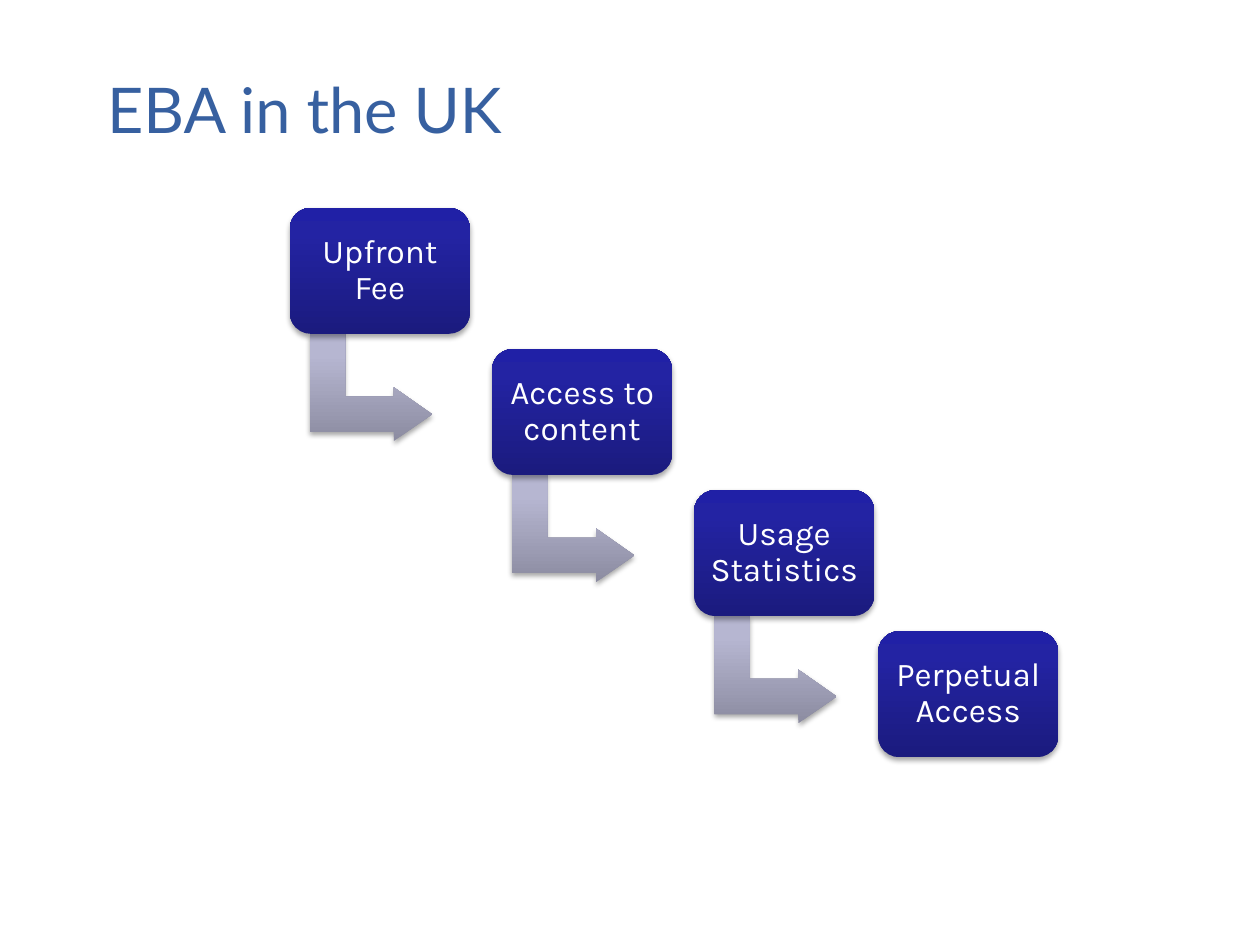
from dataclasses import dataclass

from lxml import etree
from pptx import Presentation
from pptx.dml.color import RGBColor
from pptx.enum.shapes import MSO_SHAPE
from pptx.enum.text import MSO_ANCHOR, PP_ALIGN
from pptx.oxml import parse_xml
from pptx.oxml.ns import nsdecls
from pptx.util import Inches, Pt

ROUNDED, BENT_ARROW = MSO_SHAPE.ROUNDED_RECTANGLE, MSO_SHAPE.BENT_UP_ARROW
TOP, MIDDLE = MSO_ANCHOR.TOP, MSO_ANCHOR.MIDDLE
LEFT, CENTER = PP_ALIGN.LEFT, PP_ALIGN.CENTER


@dataclass(frozen=True)
class Theme:
    title_font: str = "Lato"
    title_size: int = 36
    title_color: str = "3760A0"
    step_font: str = "Karla"
    step_size: int = 19
    step_color: str = "FFFFFF"
    step_fill: tuple = ((0, "1B1B7E"), (80, "2323A3"), (100, "2020A6"))
    arrow_fill: tuple = ((0, "8C8CA1"), (80, "B6B6D1"), (100, "B6B6D2"))


THEME = Theme()
SLIDE_W, SLIDE_H = 10, 7.5
TITLE_BOX = (0.75, 0.58, 8.84, 1.25)
STEPS_BOX = (2.3, 1.65, 6.1, 4.36)
STEPS = ["Upfront Fee", "Access to content", "Usage Statistics", "Perpetual Access"]
STEP_W, STEP_H = 1.43, 1
COLUMN_PITCH = 1.605
ARROW_W, ARROW_H = 0.85, 0.97
ARROW_DX, ARROW_DY = 0.22, 0.94


def write_text(tf, text, align, anchor, font, size, color):
    tf.word_wrap = True
    tf.vertical_anchor = anchor
    tf.text = text
    p = tf.paragraphs[0]
    p.alignment = align
    p.line_spacing = 0.9
    r = p.runs[0]
    for name, value in {"name": font, "size": Pt(size), "bold": False}.items():
        setattr(r.font, name, value)
    r.font.color.rgb = RGBColor.from_string(color)


def style_shape(sp, stops):
    sp.line.fill.background()
    sp.shadow.inherit = False
    sp.fill.gradient()
    grad = sp.fill._xPr.find("{*}gradFill")
    stop_xml = "".join(
        f'<a:gs pos="{pos * 1000}"><a:srgbClr val="{color}"/></a:gs>' for pos, color in stops
    )
    grad.getparent().replace(grad, parse_xml(
        f'<a:gradFill {nsdecls("a")} rotWithShape="0"><a:gsLst>{stop_xml}</a:gsLst>'
        '<a:lin ang="16200000" scaled="0"/></a:gradFill>'
    ))
    effects = sp._element.spPr.find("{*}effectLst")
    effects.append(etree.fromstring(
        f'<a:outerShdw {nsdecls("a")} blurRad="{Pt(3.1)}" dist="{Pt(1.8)}" dir="5400000" '
        'rotWithShape="0"><a:srgbClr val="000000"><a:alpha val="35000"/></a:srgbClr></a:outerShdw>'
    ))


def add_shape(shapes, kind, box, adjustments, stops):
    sp = shapes.add_shape(kind, *map(Inches, box))
    for i, value in enumerate(adjustments):
        sp.adjustments[i] = value
    style_shape(sp, stops)
    return sp


def add_title(s, box, text):
    title = s.shapes.title
    for name, value in zip(("left", "top", "width", "height"), box):
        setattr(title, name, Inches(value))
    write_text(title.text_frame, text, LEFT, TOP,
               THEME.title_font, THEME.title_size, THEME.title_color)


def add_step(shapes, box, text):
    sp = add_shape(shapes, ROUNDED, box, [0.167], THEME.step_fill)
    tf = sp.text_frame
    for side in ("left", "top", "right", "bottom"):
        setattr(tf, f"margin_{side}", Inches(0.08))
    write_text(tf, text, CENTER, MIDDLE,
               THEME.step_font, THEME.step_size, THEME.step_color)


def add_staircase(s, box, labels):
    left, top, width, height = box
    shapes = s.shapes.add_group_shape().shapes
    last = len(labels) - 1
    row_pitch = (height - STEP_H) / last
    for i, label in enumerate(labels):
        x = left + min(i * COLUMN_PITCH, width - STEP_W)
        y = top + i * row_pitch
        if i < last:
            arrow_box = (x + ARROW_DX, y + ARROW_DY, ARROW_W, ARROW_H)
            arrow = add_shape(shapes, BENT_ARROW, arrow_box,
                              [0.328, 0.25, 0.358], THEME.arrow_fill)
            arrow.rotation = 90
        add_step(shapes, (x, y, STEP_W, STEP_H), label)


def main():
    prs = Presentation()
    prs.slide_width, prs.slide_height = Inches(SLIDE_W), Inches(SLIDE_H)
    s = prs.slides.add_slide(prs.slide_layouts[5])
    add_title(s, TITLE_BOX, "EBA in the UK")
    add_staircase(s, STEPS_BOX, STEPS)
    prs.save("out.pptx")


if __name__ == "__main__":
    main()
